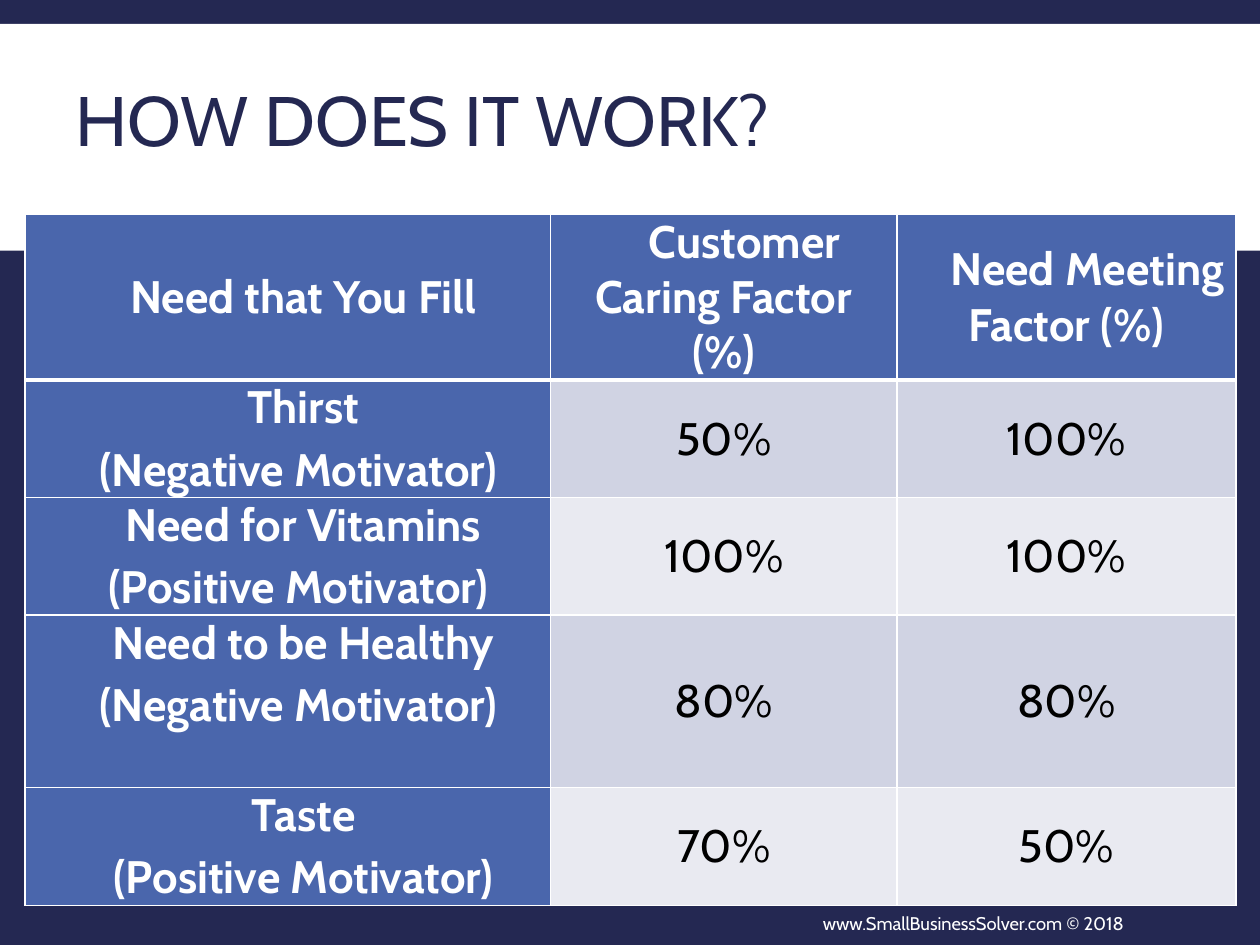
from typing import NamedTuple

from lxml.etree import SubElement
from pptx import Presentation
from pptx.dml.color import RGBColor
from pptx.enum.shapes import MSO_SHAPE as Shape
from pptx.enum.text import MSO_ANCHOR as Anchor, PP_ALIGN as Align
from pptx.oxml.ns import qn
from pptx.util import Inches, Pt

COLORS = {
    "navy": "242852",
    "blue": "4A66AC",
    "band_dark": "D0D3E3",
    "band_light": "E9EAF1",
    "white": "FFFFFF",
    "black": "000000",
}
FONT = "Cabin"
WIDTH, HEIGHT = Inches(10), Inches(7.5)
COLUMN_WIDTHS = (4.17, 2.75, 2.69)
HEADER_HEIGHT = 1.31
HEADINGS = ("Need that You Fill", " Customer Caring Factor (%)", " Need Meeting Factor (%)")


class Need(NamedTuple):
    name: str
    motivator: str
    caring: str
    meeting: str
    height: float = 0.93
    anchor: Anchor = Anchor.MIDDLE


class Line(NamedTuple):
    text: str
    margin: float = 0
    indent: float = 0
    space_after: float = 0


NEEDS = (
    Need("Thirst", "(Negative Motivator) ", "50%", "100%"),
    Need("Need for Vitamins", "(Positive Motivator) ", "100%", "100%"),
    Need("Need to be Healthy", "(Negative Motivator) ", "80%", "80%", 1.37, Anchor.TOP),
    Need("Taste", "(Positive Motivator)", "70%", "50%"),
)


def rgb(name: str) -> RGBColor:
    return RGBColor.from_string(COLORS[name])


def set_font(paragraph, size: float, color: str, bold: bool = False) -> None:
    font = paragraph.font
    font.name, font.size, font.bold = FONT, Pt(size), bold
    font.color.rgb = rgb(color)


def set_borders(cell, top: float = 1, bottom: float = 1) -> None:
    properties = cell._tc.get_or_add_tcPr()
    for side, width in (("L", 1), ("R", 1), ("T", top), ("B", bottom)):
        border = SubElement(properties, qn(f"a:ln{side}"), w=str(Pt(width)))
        fill = SubElement(border, qn("a:solidFill"))
        SubElement(fill, qn("a:srgbClr"), val=COLORS["white"])


def fill_cell(cell, lines: list[Line], fill: str, color: str, bold: bool,
              anchor: Anchor = Anchor.MIDDLE) -> None:
    cell.fill.solid()
    cell.fill.fore_color.rgb = rgb(fill)
    cell.vertical_anchor = anchor
    cell.margin_left = cell.margin_right = Inches(0.07)
    cell.margin_top = cell.margin_bottom = 0
    frame = cell.text_frame
    for number, line in enumerate(lines):
        paragraph = frame.add_paragraph() if number else frame.paragraphs[0]
        paragraph.text = line.text
        paragraph.alignment = Align.CENTER
        paragraph.space_after = Pt(line.space_after)
        properties = paragraph._p.get_or_add_pPr()
        properties.set("marL", str(Inches(line.margin)))
        properties.set("indent", str(Inches(line.indent)))
        set_font(paragraph, 26, color, bold)


def add_needs_table(slide) -> None:
    heights = (HEADER_HEIGHT, *(need.height for need in NEEDS))
    table = slide.shapes.add_table(
        len(heights), len(COLUMN_WIDTHS), Inches(0.2), Inches(1.7),
        Inches(sum(COLUMN_WIDTHS)), Inches(sum(heights))).table
    for column, width in zip(table.columns, COLUMN_WIDTHS):
        column.width = Inches(width)
    for row, height in zip(table.rows, heights):
        row.height = Inches(height)

    for column, heading in enumerate(HEADINGS):
        cell = table.cell(0, column)
        set_borders(cell, bottom=3)
        fill_cell(cell, [Line(heading, indent=0.25)], "blue", "white", True)

    for row, need in enumerate(NEEDS, start=1):
        for column in range(len(COLUMN_WIDTHS)):
            set_borders(table.cell(row, column), top=3 if row == 1 else 1)
        label = [Line(need.name, margin=0.25, space_after=4), Line(need.motivator, indent=0.25)]
        fill_cell(table.cell(row, 0), label, "blue", "white", True, need.anchor)
        band = "band_dark" if row % 2 else "band_light"
        for column, factor in enumerate((need.caring, need.meeting), start=1):
            fill_cell(table.cell(row, column), [Line(factor)], band, "black", False)


def add_title(slide) -> None:
    title = slide.shapes.title
    title.left, title.top = int(WIDTH * 0.05), Inches(0.37)
    title.width, title.height = int(WIDTH * 0.9), Inches(1.25)
    title.text_frame.vertical_anchor = Anchor.MIDDLE
    heading = title.text_frame.paragraphs[0]
    heading.text = "HOW DOES IT WORK?"
    heading.alignment = Align.LEFT
    heading.line_spacing = 0.85
    set_font(heading, 40, "navy")


def add_title_band(slide) -> None:
    band = slide.shapes.add_shape(Shape.RECTANGLE, 0, Inches(0.19), WIDTH, Inches(1.8))
    band.shadow.inherit = False
    band.fill.solid()
    band.fill.fore_color.rgb = rgb("white")
    band.line.fill.background()
    slide.shapes._spTree.insert(2, band._element)


def add_copyright(slide) -> None:
    box = slide.shapes.add_textbox(Inches(4.58), Inches(7.13), Inches(4.44), Inches(0.4))
    box.text_frame.word_wrap = True
    box.text_frame.vertical_anchor = Anchor.MIDDLE
    notice = box.text_frame.paragraphs[0]
    notice.text = "www.SmallBusinessSolver.com © 2018"
    notice.alignment = Align.RIGHT
    set_font(notice, 10.5, "white")


def main() -> None:
    deck = Presentation()
    deck.slide_width, deck.slide_height = WIDTH, HEIGHT
    slide = deck.slides.add_slide(deck.slide_layouts.get_by_name("Title Only"))
    slide.background.fill.solid()
    slide.background.fill.fore_color.rgb = rgb("navy")
    add_title_band(slide)
    add_title(slide)
    add_needs_table(slide)
    add_copyright(slide)
    deck.save("out.pptx")


if __name__ == "__main__":
    main()
